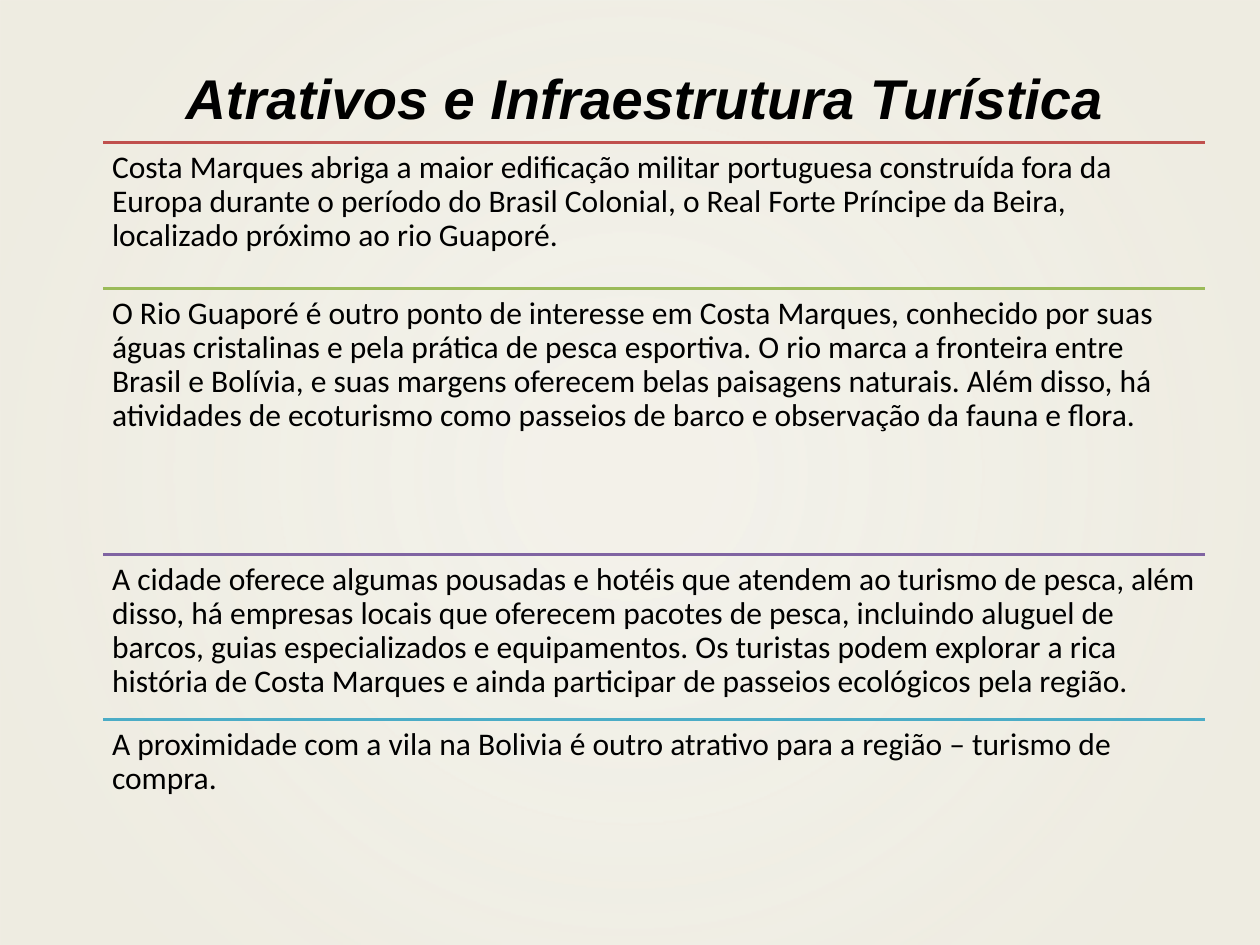
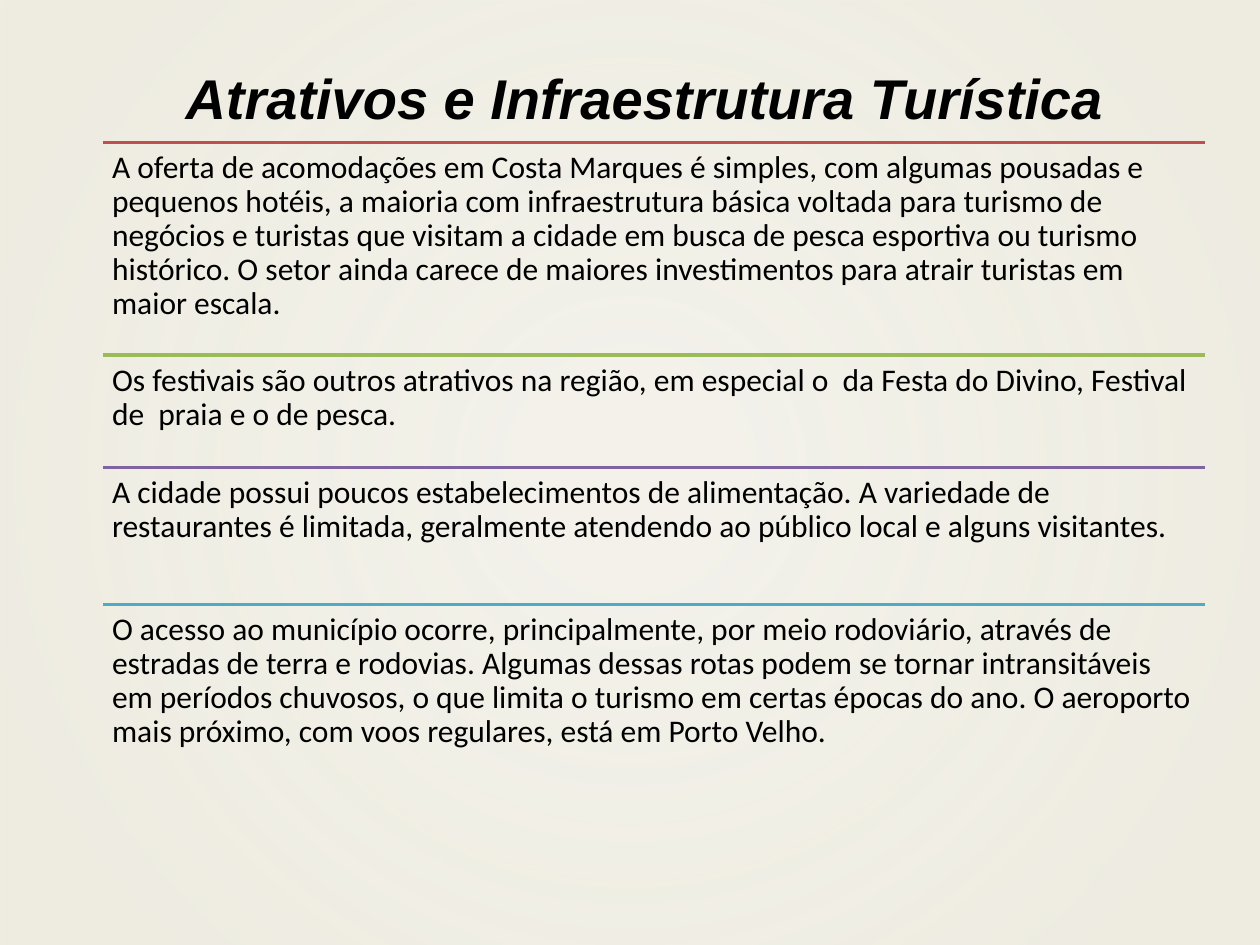
from pptx import Presentation
from pptx import util as u
from pptx.dml.color import RGBColor
from pptx.enum import shapes, text
from pptx.oxml import parse_xml
from pptx.oxml.ns import nsdecls, qn

COLORS = {"ink": "000000", "sand": "EEECE1", "red": "C0504D",
          "green": "9BBB59", "purple": "8064A2", "aqua": "4BACC6"}
RULE_COLORS = ["red", "green", "purple", "aqua"]
TITLE = "Atrativos e Infraestrutura Turística"
TITLE_FONT = {"name": "Arial", "size": u.Pt(32), "bold": True, "italic": True}
TOPIC_FONT = {"name": "Calibri", "size": u.Pt(18)}
WIDTH, HEIGHT = 25.4, 19.05
LEFT, TOPIC_WIDTH, INSET = 2.08, 22.22, 0.18
MARGINS = ("margin_left", "margin_top", "margin_right", "margin_bottom")

# Each slide: the edges between its topics in cm, and the topics themselves.
SLIDES = [
    ([2.87, 5.82, 11.18, 14.5, 18.72], [
        "Costa Marques abriga a maior edificação militar portuguesa construída fora da "
        "Europa durante o período do Brasil Colonial, o Real Forte Príncipe da Beira, "
        "localizado próximo ao rio Guaporé.",
        "O Rio Guaporé é outro ponto de interesse em Costa Marques, conhecido por suas "
        "águas cristalinas e pela prática de pesca esportiva. O rio marca a fronteira entre "
        "Brasil e Bolívia, e suas margens oferecem belas paisagens naturais. Além disso, há "
        "atividades de ecoturismo como passeios de barco e observação da fauna e flora.",
        "A cidade oferece algumas pousadas e hotéis que atendem ao turismo de pesca, "
        "além disso, há empresas locais que oferecem pacotes de pesca, incluindo aluguel de "
        "barcos, guias especializados e equipamentos. Os turistas podem explorar a rica "
        "história de Costa Marques e ainda participar de passeios ecológicos pela região.",
        "A proximidade com a vila na Bolivia é outro atrativo para a região – turismo de "
        "compra.",
    ]),
    ([2.87, 7.16, 9.42, 12.19, 16.53], [
        "A oferta de acomodações em Costa Marques é simples, com algumas pousadas e "
        "pequenos hotéis, a maioria com infraestrutura básica voltada para turismo de "
        "negócios e turistas que visitam a cidade em busca de pesca esportiva ou turismo "
        "histórico. O setor ainda carece de maiores investimentos para atrair turistas em "
        "maior escala.",
        "Os festivais são outros atrativos na região, em especial o  da Festa do Divino, "
        "Festival de  praia e o de pesca.",
        "A cidade possui poucos estabelecimentos de alimentação. A variedade de "
        "restaurantes é limitada, geralmente atendendo ao público local e alguns visitantes.",
        "O acesso ao município ocorre, principalmente, por meio rodoviário, através de "
        "estradas de terra e rodovias. Algumas dessas rotas podem se tornar intransitáveis "
        "em períodos chuvosos, o que limita o turismo em certas épocas do ano. O aeroporto "
        "mais próximo, com voos regulares, está em Porto Velho.",
    ]),
]


def add_backdrop(slide):
    """Cover the slide with a translucent radial glow, lightest in the middle."""
    backdrop = slide.shapes.add_shape(
        shapes.MSO_SHAPE.RECTANGLE, 0, 0, u.Cm(WIDTH), u.Cm(HEIGHT))
    stops = "".join(
        f'<a:gs pos="{position}000"><a:srgbClr val="{COLORS["sand"]}">'
        f'<a:alpha val="{opacity}000"/></a:srgbClr></a:gs>'
        for position, opacity in [(10, 68), (85, 97)])
    glow = parse_xml(
        f'<a:gradFill {nsdecls("a")} rotWithShape="1"><a:gsLst>{stops}</a:gsLst>'
        '<a:path path="circle"><a:fillToRect l="50000" t="50000" r="50000" b="50000"/>'
        '</a:path></a:gradFill>')
    backdrop._element.spPr.find(qn("a:prstGeom")).addnext(glow)
    backdrop.line.fill.background()
    backdrop.shadow.inherit = False


def add_text(slide, words, left, top, width, height, font):
    """Add a wrapping one-paragraph text box; return its frame and paragraph."""
    frame = slide.shapes.add_textbox(
        u.Cm(left), u.Cm(top), u.Cm(width), u.Cm(height)).text_frame
    frame.word_wrap = True
    paragraph = frame.paragraphs[0]
    run = paragraph.add_run()
    run.text = words
    for attribute, value in font.items():
        setattr(run.font, attribute, value)
    run.font.color.rgb = RGBColor.from_string(COLORS["ink"])
    return frame, paragraph


deck = Presentation()
deck.slide_width, deck.slide_height = u.Cm(WIDTH), u.Cm(HEIGHT)

for edges, topics in SLIDES:
    slide = deck.slides.add_slide(deck.slide_layouts[6])
    add_backdrop(slide)

    title_frame, title = add_text(slide, TITLE, 0.84, 1.52, 24.31, 0.89, TITLE_FONT)
    title_frame.vertical_anchor = text.MSO_ANCHOR.MIDDLE
    title.alignment = text.PP_ALIGN.CENTER

    for top, bottom, topic, color in zip(edges, edges[1:], topics, RULE_COLORS):
        rule = slide.shapes.add_connector(
            shapes.MSO_CONNECTOR.STRAIGHT,
            u.Cm(LEFT), u.Cm(top), u.Cm(LEFT + TOPIC_WIDTH), u.Cm(top))
        rule.line.color.rgb = RGBColor.from_string(COLORS[color])
        rule.line.width = u.Pt(2)
        rule._element.spPr.append(parse_xml(f'<a:effectLst {nsdecls("a")}/>'))

        topic_frame, paragraph = add_text(
            slide, topic, LEFT, top, TOPIC_WIDTH, bottom - top, TOPIC_FONT)
        paragraph.line_spacing = 0.9
        for margin in MARGINS:
            setattr(topic_frame, margin, u.Cm(INSET))

deck.save("out.pptx")
